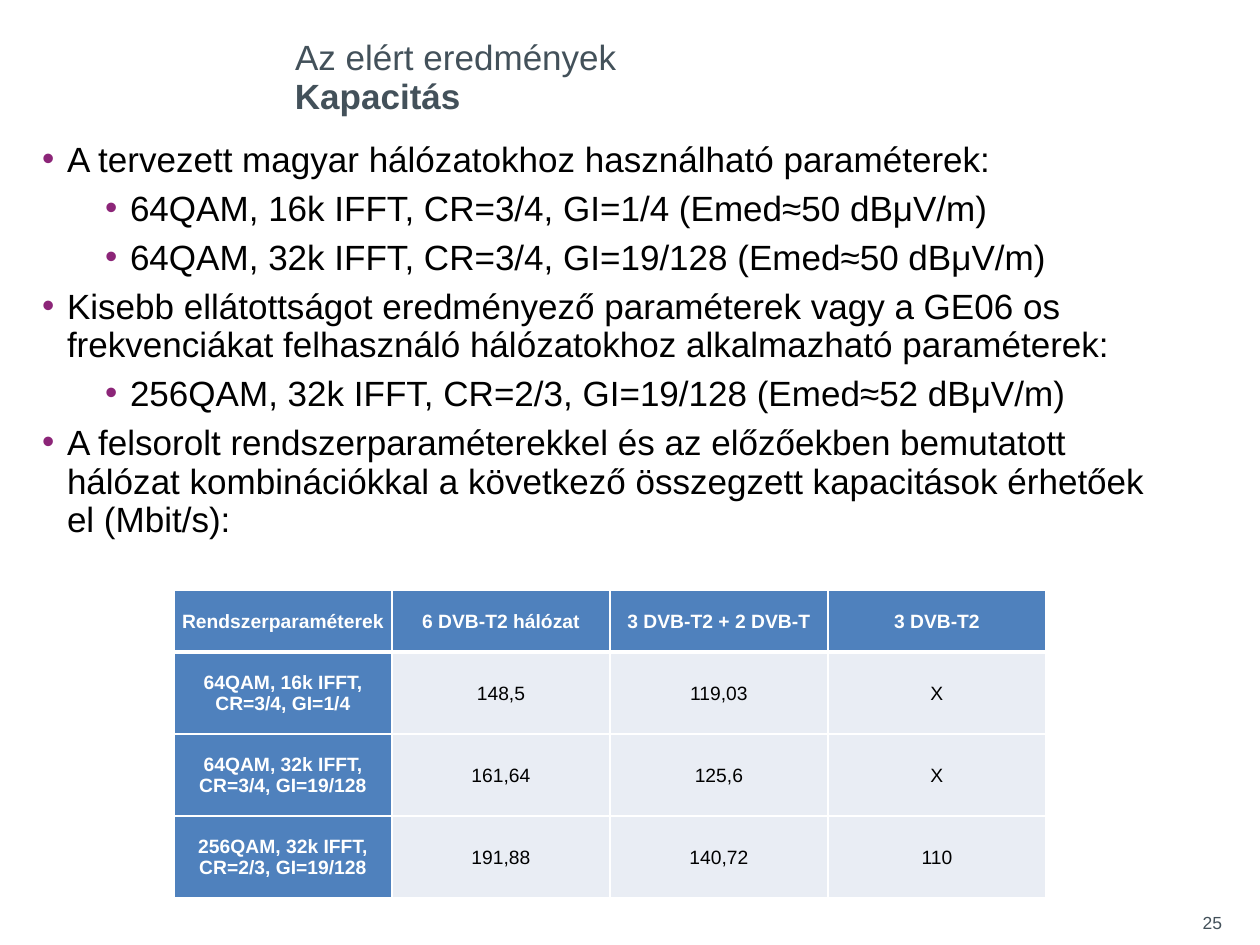
from typing import NamedTuple

from lxml.etree import SubElement
from pptx import Presentation
from pptx.dml.color import RGBColor
from pptx.enum.text import MSO_ANCHOR as Anchor, MSO_AUTO_SIZE as AutoSize, PP_ALIGN as Align
from pptx.oxml import parse_xml
from pptx.oxml.ns import nsdecls, qn
from pptx.util import Emu, Pt

PX_PER_INCH = 126
COLORS = {
    "slate": "43515A",
    "black": "000000",
    "white": "FFFFFF",
    "purple": "8C2578",
    "header": "4F81BD",
    "cell": "E9EDF4",
}
FONT = "Arial"


class Box(NamedTuple):
    left: int
    top: int
    width: int
    height: int


class Bullet(NamedTuple):
    level: int
    text: str


BULLETS = [
    Bullet(0, "A tervezett magyar hálózatokhoz használható paraméterek:"),
    Bullet(1, "64QAM, 16k IFFT, CR=3/4, GI=1/4 (Emed≈50 dBμV/m)"),
    Bullet(1, "64QAM, 32k IFFT, CR=3/4, GI=19/128 (Emed≈50 dBμV/m)"),
    Bullet(0, "Kisebb ellátottságot eredményező paraméterek vagy a GE06 os "
              "frekvenciákat felhasználó hálózatokhoz alkalmazható paraméterek:"),
    Bullet(1, "256QAM, 32k IFFT, CR=2/3, GI=19/128 (Emed≈52 dBμV/m)"),
    Bullet(0, "A felsorolt rendszerparaméterekkel és az előzőekben bemutatott "
              "hálózat kombinációkkal a következő összegzett kapacitások érhetőek "
              "el (Mbit/s):"),
]
CAPACITIES = [
    ["Rendszerparaméterek", "6 DVB-T2 hálózat", "3 DVB-T2 + 2 DVB-T", "3 DVB-T2"],
    ["64QAM, 16k IFFT, CR=3/4, GI=1/4", "148,5", "119,03", "X"],
    ["64QAM, 32k IFFT, CR=3/4, GI=19/128", "161,64", "125,6", "X"],
    ["256QAM, 32k IFFT, CR=2/3, GI=19/128", "191,88", "140,72", "110"],
]
ROW_HEIGHTS = [62, 82, 82, 82]


def px(value: int) -> Emu:
    return Emu(round(value * 914400 / PX_PER_INCH))


def rgb(name: str) -> RGBColor:
    return RGBColor.from_string(COLORS[name])


def write(paragraph, text: str, *, size: int = 20, color: str = "black",
          bold: bool = False, align=Align.LEFT, line: int | None = None) -> None:
    paragraph.alignment = align
    if line:
        paragraph.line_spacing = Pt(line)
    run = paragraph.add_run()
    run.text = text
    run.font.name = FONT
    run.font.size = Pt(size)
    run.font.bold = bold
    run.font.color.rgb = rgb(color)


def place(shape, box: Box, *, anchor=Anchor.TOP, inset_y: int = 6):
    shape.left, shape.top, shape.width, shape.height = map(px, box)
    frame = shape.text_frame
    frame.word_wrap = True
    frame.auto_size = AutoSize.NONE
    frame.vertical_anchor = anchor
    frame.margin_left = frame.margin_right = px(13)
    frame.margin_top = frame.margin_bottom = px(inset_y)
    return frame


def add_box(slide, box: Box, **options):
    return place(slide.shapes.add_textbox(0, 0, 0, 0), box, **options)


def set_bullet(paragraph, level: int) -> None:
    paragraph.level = level
    properties = paragraph._p.get_or_add_pPr()
    properties.set("marL", str(px(54 + 63 * level)))
    properties.set("indent", str(px(-25)))
    bullet_color = SubElement(properties, qn("a:buClr"))
    SubElement(bullet_color, qn("a:srgbClr")).set("val", COLORS["purple"])
    SubElement(properties, qn("a:buFont")).set("typeface", FONT)
    SubElement(properties, qn("a:buChar")).set("char", "•")


def set_borders(cell, top: int, bottom: int) -> None:
    properties = cell._tc.get_or_add_tcPr()
    sides = {"L": 1, "R": 1, "T": top, "B": bottom}
    for index, (side, width) in enumerate(sides.items()):
        properties.insert(index, parse_xml(
            f'<a:ln{side} {nsdecls("a")} w="{Pt(width)}"><a:solidFill>'
            f'<a:srgbClr val="{COLORS["white"]}"/></a:solidFill></a:ln{side}>'))


def add_capacity_table(slide, box: Box) -> None:
    columns = len(CAPACITIES[0])
    table = slide.shapes.add_table(len(CAPACITIES), columns, *map(px, box)).table
    for column in table.columns:
        column.width = px(box.width // columns)
    for row_index, (height, values) in enumerate(zip(ROW_HEIGHTS, CAPACITIES)):
        table.rows[row_index].height = px(height)
        for column_index, text in enumerate(values):
            cell = table.cell(row_index, column_index)
            heading = row_index == 0 or column_index == 0
            cell.fill.solid()
            cell.fill.fore_color.rgb = rgb("header" if heading else "cell")
            cell.vertical_anchor = Anchor.MIDDLE
            cell.margin_left = cell.margin_right = cell.margin_top = px(1)
            cell.margin_bottom = 0
            write(cell.text_frame.paragraphs[0], text, size=11, bold=heading,
                  color="white" if heading else "black", align=Align.CENTER)
            # The rule under the header row is thicker
            set_borders(cell, top=3 if row_index == 1 else 1,
                        bottom=3 if row_index == 0 else 1)


def main() -> None:
    presentation = Presentation()
    presentation.slide_width, presentation.slide_height = px(1260), px(945)
    slide = presentation.slides.add_slide(presentation.slide_layouts[5])

    # Title and subtitle
    title = place(slide.shapes.title, Box(282, 3, 895, 75),
                  anchor=Anchor.BOTTOM, inset_y=0)
    write(title.paragraphs[0], "Az elért eredmények", color="slate", line=22)
    subtitle = add_box(slide, Box(282, 78, 895, 39), inset_y=0)
    write(subtitle.paragraphs[0], "Kapacitás", color="slate", bold=True, line=22)

    # Bulleted parameters
    body = add_box(slide, Box(0, 135, 1166, 416))
    for index, bullet in enumerate(BULLETS):
        paragraph = body.add_paragraph() if index else body.paragraphs[0]
        set_bullet(paragraph, bullet.level)
        paragraph.space_before = Pt(6 if index else 0)
        write(paragraph, bullet.text, line=22)

    # Capacity table
    add_capacity_table(slide, Box(174, 590, 872, sum(ROW_HEIGHTS)))

    # Page number
    number = add_box(slide, Box(1176, 906, 59, 50))
    write(number.paragraphs[0], "25", size=10, color="slate", align=Align.RIGHT)

    presentation.save("out.pptx")


if __name__ == "__main__":
    main()
